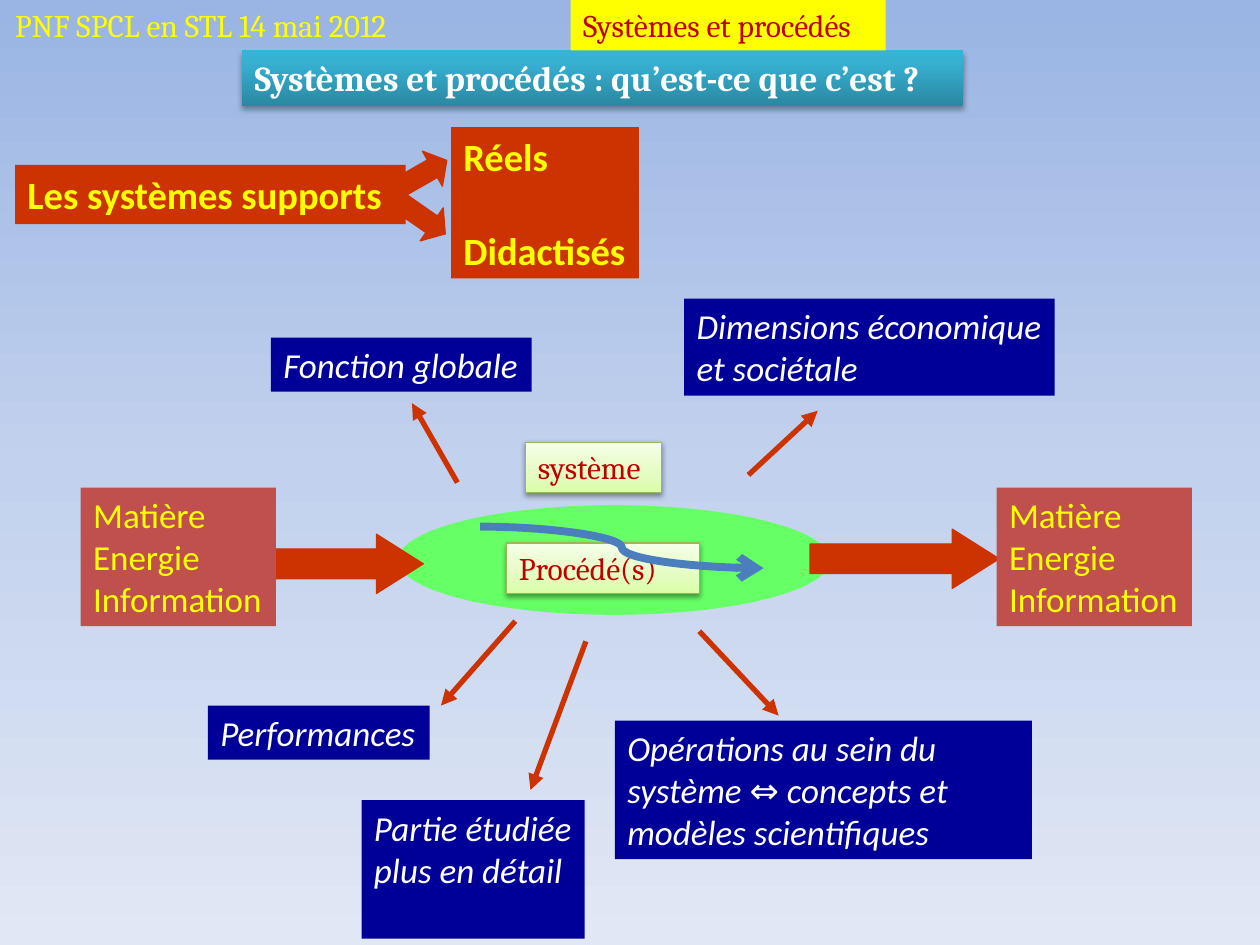
from copy import deepcopy

from lxml import etree
from pptx import Presentation
from pptx.dml.color import RGBColor
from pptx.enum.shapes import MSO_CONNECTOR, MSO_SHAPE
from pptx.enum.text import MSO_ANCHOR, MSO_AUTO_SIZE, PP_ALIGN
from pptx.oxml import parse_xml
from pptx.oxml.ns import nsdecls, qn
from pptx.util import Inches, Pt

RECT, OVAL, ARROW = MSO_SHAPE.RECTANGLE, MSO_SHAPE.OVAL, MSO_SHAPE.RIGHT_ARROW
LINE, CURVE = MSO_CONNECTOR.STRAIGHT, MSO_CONNECTOR.CURVE
TOP, LEFT, FIXED = MSO_ANCHOR.TOP, PP_ALIGN.LEFT, MSO_AUTO_SIZE.NONE


class Theme:
    serif, sans = "Cambria", "Calibri"
    small, mid, large = 18, 20, 22
    yellow, white, red = "FFFF00", "FFFFFF", "C00000"
    rust, navy, brick = "CC3300", "000099", "C0504D"
    green, blue, edge = "66FF66", "4B7EBC", "98B955"
    sky = [(0, "9AB5E4"), (50, "C2D1ED"), (100, "E1E8F5")]
    lime = [(0, "DAFDA7"), (35, "E4FCC2"), (100, "F5FFE7")]
    teal = [(0, "2A88A2"), (80, "37B1D2"), (100, "34B4D6")]


def blend(fill, stops, angle):
    fill.gradient()
    fill.gradient_angle = angle
    first = fill.gradient_stops[0]._gs
    first.addnext(deepcopy(first))
    for stop, (place, color) in zip(fill.gradient_stops, stops):
        stop.position = place / 100
        stop.color.rgb = RGBColor.from_string(color)


def write(text, box=None, at=None, fill=None, font=Theme.sans, size=Theme.mid,
          color=Theme.white, bold=False, italic=False, wrap=False, gap=0):
    if box is None:
        box = slide.shapes.add_shape(RECT, *map(Inches, at))
        box.shadow.inherit = False
        box.line.fill.background()
    if isinstance(fill, list):
        blend(box.fill, fill, 90)
    elif fill:
        box.fill.solid()
        box.fill.fore_color.rgb = RGBColor.from_string(fill)
    else:
        box.fill.background()
    frame = box.text_frame
    frame.text = text
    frame.auto_size = FIXED
    frame.word_wrap = wrap
    frame.vertical_anchor = TOP
    for rank, para in enumerate(frame.paragraphs):
        para.alignment = LEFT
        para.space_before = Pt(gap if rank else 0)
        para.font.name, para.font.size = font, Pt(size)
        para.font.bold, para.font.italic = bold, italic
        para.font.color.rgb = RGBColor.from_string(color)
    return box


deck = Presentation()
deck.slide_width, deck.slide_height = Inches(10), Inches(7.5)
slide = deck.slides.add_slide(deck.slide_layouts[5])
blend(slide.background.fill, Theme.sky, 270)

title = slide.shapes.title
title.left, title.top, title.width, title.height = map(Inches, (1.92, 0.4, 5.72, 0.44))
write("Systèmes et procédés : qu’est-ce que c’est ?", box=title, fill=Theme.teal,
      font=Theme.serif, bold=True)

write("Systèmes et procédés", at=(4.53, 0, 2.5, 0.4), fill=Theme.yellow,
      font=Theme.serif, size=Theme.small, color=Theme.red)
write("PNF SPCL en STL 14 mai 2012", at=(0.02, 0, 3.45, 0.4),
      font=Theme.serif, size=Theme.small, color=Theme.yellow)

for text, at in [
    ("Les systèmes supports", (0.12, 1.31, 3.1, 0.47)),
    ("Réels\nDidactisés", (3.58, 1.01, 1.49, 1.2)),
]:
    write(text, at=at, fill=Theme.rust, size=Theme.large, color=Theme.yellow,
          bold=True, gap=27)

for text, at, wrap in [
    ("Opérations au sein du système ⇔ concepts et modèles scientifiques",
     (4.88, 5.72, 3.31, 1.1), True),
    ("Fonction globale", (2.15, 2.68, 2.07, 0.43), False),
    ("Performances", (1.65, 5.6, 1.76, 0.43), False),
    ("Dimensions économique et sociétale", (5.43, 2.37, 2.94, 0.77), True),
    ("Partie étudiée plus en détail", (2.87, 6.35, 1.77, 1.1), True),
]:
    write(text, at=at, fill=Theme.navy, italic=True, wrap=wrap)

oval = slide.shapes.add_shape(OVAL, *map(Inches, (3.16, 4.01, 3.43, 0.87)))
oval.shadow.inherit = False
oval.fill.solid()
oval.fill.fore_color.rgb = RGBColor.from_string(Theme.green)
oval.line.fill.background()

for at, turn, head in [
    ((3.07, 1.24, 0.51, 0.32), 330.2, 0.41),
    ((3.07, 1.55, 0.51, 0.32), 34.9, 0.41),
    ((1.86, 4.24, 1.5, 0.47), 0, 0.79),
    ((6.43, 4.2, 1.5, 0.47), 0, 0.79),
]:
    arrow = slide.shapes.add_shape(ARROW, *map(Inches, at))
    arrow.shadow.inherit = False
    arrow.rotation = turn
    arrow.adjustments[0], arrow.adjustments[1] = 0.5, head
    arrow.fill.solid()
    arrow.fill.fore_color.rgb = RGBColor.from_string(Theme.rust)
    arrow.line.color.rgb = RGBColor.from_string(Theme.rust)
    arrow.line.width = Pt(0.75)

for left in (7.91, 0.64):
    write("Matière\nEnergie\nInformation", at=(left, 3.87, 1.55, 1.1),
          fill=Theme.brick, color=Theme.yellow)

glossy = [(title, 35, 1.8)]
for text, at in [
    ("système", (4.17, 3.51, 1.08, 0.4)),
    ("Procédé(s)", (4.02, 4.31, 1.53, 0.4)),
]:
    label = write(text, at=at, fill=Theme.lime, font=Theme.serif,
                  size=Theme.small, color=Theme.red)
    label.line.color.rgb = RGBColor.from_string(Theme.edge)
    label.line.width = Pt(0.75)
    glossy.append((label, 38, 1.6))

for shape, alpha, drop in glossy:
    shape.shadow.inherit = False
    shape._element.spPr.find(qn("a:effectLst")).append(parse_xml(
        f'<a:outerShdw {nsdecls("a")} blurRad="{Pt(3.1)}" dist="{Pt(drop)}" '
        f'dir="5400000" rotWithShape="0"><a:srgbClr val="000000">'
        f'<a:alpha val="{alpha * 1000}"/></a:srgbClr></a:outerShdw>'))

for kind, ends, color, width, tip in [
    (LINE, (3.63, 3.83, 3.27, 3.2), Theme.rust, 3, "triangle"),
    (LINE, (5.94, 3.77, 6.49, 3.26), Theme.rust, 3, "triangle"),
    (LINE, (4.09, 4.93, 3.5, 5.6), Theme.rust, 3, "triangle"),
    (LINE, (5.55, 5.01, 6.18, 5.68), Theme.rust, 3, "triangle"),
    (LINE, (4.65, 5.09, 4.21, 6.27), Theme.rust, 3, "triangle"),
    (CURVE, (3.81, 4.18, 6.06, 4.51), Theme.blue, 4.5, "arrow"),
]:
    link = slide.shapes.add_connector(kind, *map(Inches, ends))
    link.line.color.rgb = RGBColor.from_string(color)
    link.line.width = Pt(width)
    etree.SubElement(link.line._get_or_add_ln(), qn("a:tailEnd"), type=tip)
    etree.SubElement(link._element.spPr, qn("a:effectLst"))

deck.save("out.pptx")
